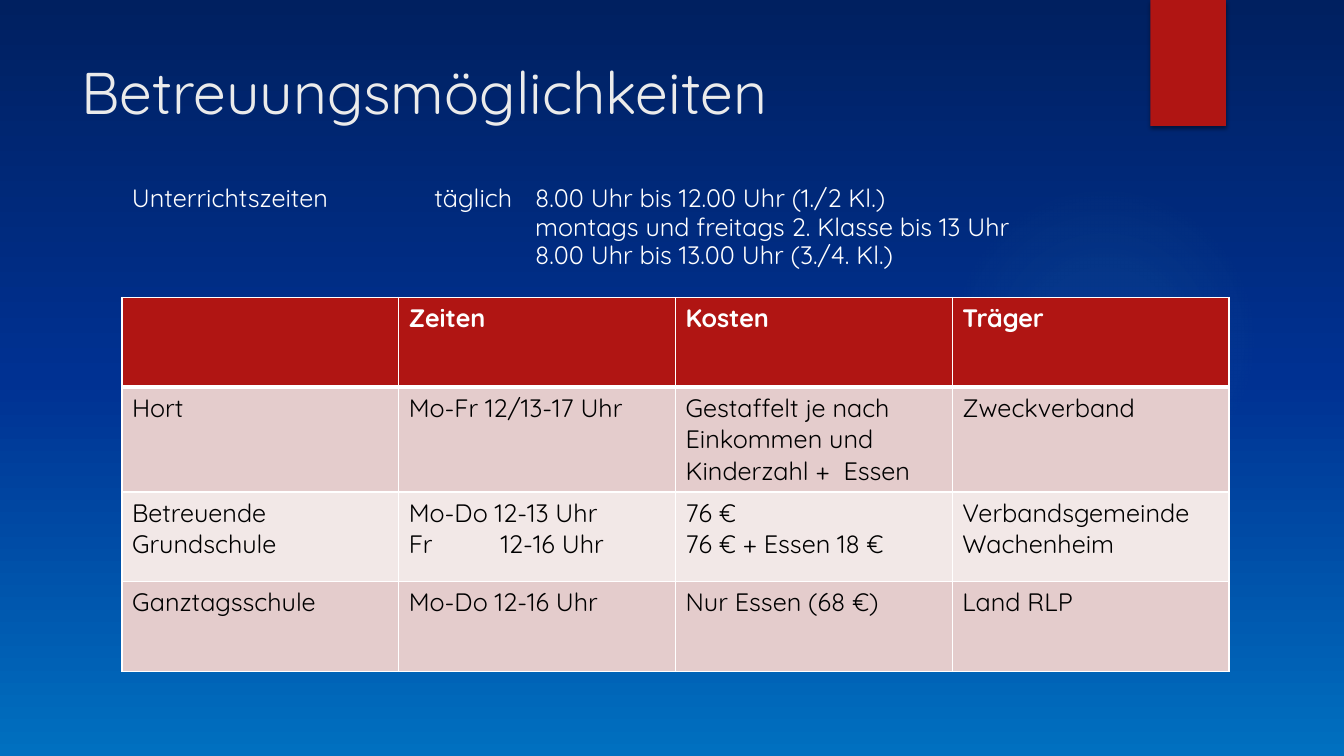
from lxml import etree
from pptx import Presentation
from pptx.dml.color import RGBColor
from pptx.enum import shapes, text
from pptx.oxml import ns, parse_xml
from pptx.util import Inches, Pt

FONT = "Quicksand"
COLORS = {
    "navy": "002060", "royal": "003192", "azure": "0070C0", "glow": "50B9C1",
    "red": "B01513", "title": "EBEBEB", "white": "FFFFFF", "black": "000000",
    "band_dark": "E4CCCC", "band_light": "F2E8E7",
}
HOURS = [
    "Unterrichtszeiten\ttäglich\t8.00 Uhr bis 12.00 Uhr (1./2 Kl.)",
    "\t\tmontags und freitags 2. Klasse bis 13 Uhr",
    "\t\t8.00 Uhr bis 13.00 Uhr (3./4. Kl.)",
]
OFFERS = [
    ["", "Zeiten", "Kosten", "Träger"],
    ["Hort", "Mo-Fr 12/13-17 Uhr",
     "Gestaffelt je nach Einkommen und Kinderzahl +  Essen", "Zweckverband"],
    ["Betreuende Grundschule", "Mo-Do 12-13 Uhr\nFr\t12-16 Uhr",
     "76 €\n76 € + Essen 18 €", "Verbandsgemeinde Wachenheim"],
    ["Ganztagsschule", "Mo-Do 12-16 Uhr", "Nur Essen (68 €)", "Land RLP"],
]


def rgb(name):
    return RGBColor.from_string(COLORS[name])


def gradient(stops, direction):
    gs = "".join(
        f'<a:gs pos="{pos * 1000}"><a:srgbClr val="{COLORS[name]}">'
        f'<a:alpha val="{alpha * 1000}"/></a:srgbClr></a:gs>'
        for pos, name, alpha in stops)
    return parse_xml(f'<a:gradFill {ns.nsdecls("a")} rotWithShape="1">'
                     f'<a:gsLst>{gs}</a:gsLst>{direction}</a:gradFill>')


def style(p, size, color, bold=False):
    for r in p.runs:
        r.font.name = FONT
        r.font.size = Pt(size)
        r.font.bold = bold
        r.font.color.rgb = rgb(color)


def add_tabs(p, stops):
    tabs = etree.SubElement(p._p.get_or_add_pPr(), ns.qn("a:tabLst"))
    for stop in stops:
        etree.SubElement(tabs, ns.qn("a:tab"), pos=str(Inches(stop)), algn="l")


def paint_background(s):
    fill = s.background.fill
    fill.solid()
    bg_pr = s._element.cSld.bg.bgPr
    bg_pr.replace(bg_pr[0], gradient(
        [(0, "navy", 100), (50, "royal", 100), (100, "azure", 100)],
        '<a:lin ang="5400000" scaled="0"/>'))


def add_glow(s, x, y, size):
    sp = s.shapes.add_shape(shapes.MSO_SHAPE.OVAL, Inches(x), Inches(y),
                            Inches(size), Inches(size))
    sp.shadow.inherit = False
    sp.line.fill.background()
    sp.fill.solid()
    sp_pr = sp._element.spPr
    sp_pr.replace(sp_pr.find(ns.qn("a:solidFill")), gradient(
        [(0, "glow", 7), (36, "glow", 6), (69, "glow", 0)],
        '<a:path path="circle"><a:fillToRect l="50000" t="50000" '
        'r="50000" b="50000"/></a:path>'))


def add_ribbon(s, x, y, w, h):
    sp = s.shapes.add_shape(shapes.MSO_SHAPE.RECTANGLE, Inches(x), Inches(y),
                            Inches(w), Inches(h))
    sp.shadow.inherit = False
    sp.fill.solid()
    sp.fill.fore_color.rgb = rgb("red")
    sp.line.fill.background()
    effects = sp._element.spPr.find(ns.qn("a:effectLst"))
    effects.append(parse_xml(
        f'<a:outerShdw {ns.nsdecls("a")} blurRad="{Pt(3)}" dist="{Pt(2)}" '
        f'dir="5400000" rotWithShape="0"><a:srgbClr val="{COLORS["black"]}">'
        '<a:alpha val="45000"/></a:srgbClr></a:outerShdw>'))


def set_title(s, x, y, w, h):
    sp = s.shapes.title
    sp.left, sp.top, sp.width, sp.height = map(Inches, (x, y, w, h))
    tf = sp.text_frame
    tf.text = "Betreuungsmöglichkeiten"
    tf.vertical_anchor = text.MSO_ANCHOR.TOP
    p = tf.paragraphs[0]
    p.alignment = text.PP_ALIGN.LEFT
    style(p, 42, "title")


def add_hours(s, x, y, w, h):
    sp = s.shapes.add_textbox(Inches(x), Inches(y), Inches(w), Inches(h))
    tf = sp.text_frame
    tf.word_wrap = True
    tf.text = "\n".join(HOURS)
    for p in tf.paragraphs:
        p.line_spacing = 0.95
        add_tabs(p, [3, 4])
        style(p, 18, "white")


def set_borders(cell, widths):
    tc_pr = cell._tc.get_or_add_tcPr()
    for i, (side, width) in enumerate(zip("LRTB", widths)):
        tc_pr.insert(i, parse_xml(
            f'<a:ln{side} {ns.nsdecls("a")} w="{Pt(width)}"><a:solidFill>'
            f'<a:srgbClr val="{COLORS["white"]}"/></a:solidFill></a:ln{side}>'))


def add_offers(s, x, y, w, row_h):
    rows, cols = len(OFFERS), len(OFFERS[0])
    table = s.shapes.add_table(rows, cols, Inches(x), Inches(y), Inches(w),
                               Inches(row_h * rows)).table
    for i, row in enumerate(OFFERS):
        table.rows[i].height = Inches(row_h)
        header = i == 0
        fill = "red" if header else "band_dark" if i % 2 else "band_light"
        for j, words in enumerate(row):
            cell = table.cell(i, j)
            cell.fill.solid()
            cell.fill.fore_color.rgb = rgb(fill)
            set_borders(cell, (1, 1, 3 if i == 1 else 1, 3 if header else 1))
            cell.text_frame.text = words
            for p in cell.text_frame.paragraphs:
                if "\t" in p.text:
                    add_tabs(p, [0.91])
                style(p, 18, "white" if header else "black", header)


def build_care_slide(prs):
    s = prs.slides.add_slide(prs.slide_layouts[5])
    paint_background(s)
    add_glow(s, 9.41, 1.83, 3.08)
    add_ribbon(s, 11.41, 0, 0.75, 1.25)
    set_title(s, 0.71, 0.5, 10.29, 1.53)
    add_offers(s, 1.21, 2.95, 10.98, 0.89)
    add_hours(s, 1.21, 1.78, 10.98, 1.01)


def main():
    prs = Presentation()
    prs.slide_width, prs.slide_height = Inches(13.33), Inches(7.5)
    build_care_slide(prs)
    prs.save("out.pptx")


if __name__ == "__main__":
    main()
